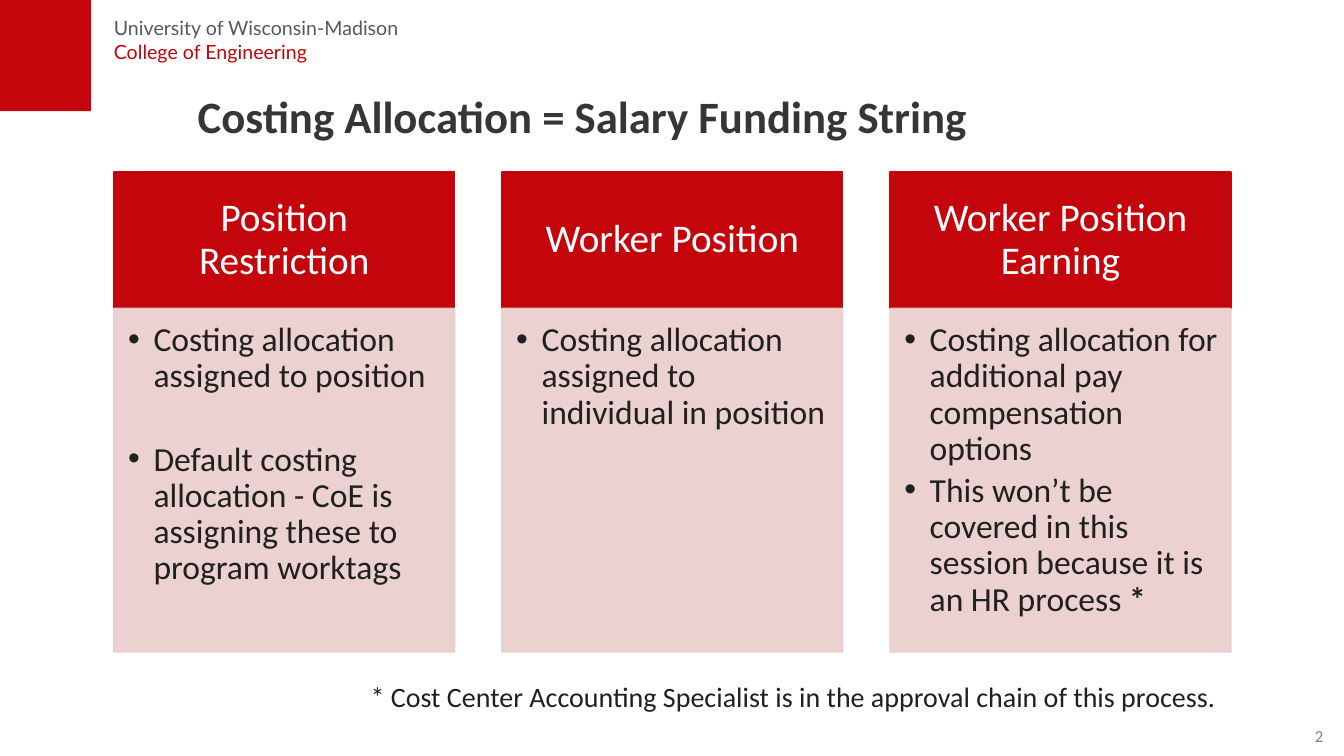
from lxml import etree
from pptx import Presentation
from pptx.dml.color import RGBColor
from pptx.enum.shapes import MSO_SHAPE
from pptx.enum.text import MSO_ANCHOR, PP_ALIGN
from pptx.oxml.ns import qn
from pptx.util import Cm, Pt

RECT = MSO_SHAPE.RECTANGLE
TOP, MIDDLE = MSO_ANCHOR.TOP, MSO_ANCHOR.MIDDLE
LEFT, CENTER, RIGHT = PP_ALIGN.LEFT, PP_ALIGN.CENTER, PP_ALIGN.RIGHT

# Content: a paragraph is a list of (text, bold) runs
SCHOOL = "University of Wisconsin-Madison"
COLLEGE = "College of Engineering"
TITLE = "Costing Allocation = Salary Funding String"
CARDS = [
    ("Position Restriction", 33.5, [
        [("Costing allocation assigned to position", False)],
        [("Default costing allocation - CoE is assigning these to "
          "program worktags", False)],
    ]),
    ("Worker Position", 4, [
        [("Costing allocation assigned to individual in position", False)],
    ]),
    ("Worker Position Earning", 4, [
        [("Costing allocation for additional pay compensation options", False)],
        [("This won’t be covered in this session because it is an HR process ",
          False), ("*", True)],
    ]),
]
NOTE = "* Cost Center Accounting Specialist is in the approval chain of this process."
NUMBER = "2"

COLORS = {
    "red": "C5050C", "college": "C3030C", "pink": "EACCCC", "white": "FFFFFF",
    "school": "585858", "title": "363636", "ink": "202020", "number": "808080",
}

# Card grid, in cm
LEFT_X, PITCH, WIDTH = 2.87, 9.78, 8.59
HEAD_Y, HEAD_H, BODY_H = 4.34, 3.43, 8.66


def rgb(name):
    return RGBColor.from_string(COLORS[name])


def write(frame, runs, size, color, font="Calibri", align=LEFT, line=1.0,
          after=0, bullet=False, first=True):
    """Put one paragraph of (text, bold) runs into a text frame."""
    para = frame.paragraphs[0] if first else frame.add_paragraph()
    para.alignment, para.line_spacing = align, line
    para.space_before, para.space_after = Pt(0), Pt(after)
    if bullet:
        props = para._p.get_or_add_pPr()
        props.set("marL", str(Cm(0.64)))
        props.set("indent", str(-Cm(0.64)))
        etree.SubElement(props, qn("a:buFont")).set("typeface", "Arial")
        etree.SubElement(props, qn("a:buChar")).set("char", "•")
    for text, bold in runs:
        run = para.add_run()
        run.text = text
        run.font.name, run.font.size, run.font.bold = font, Pt(size), bold
        run.font.color.rgb = rgb(color)


def setup(frame, inset, anchor=TOP, wrap=True):
    frame.word_wrap, frame.vertical_anchor = wrap, anchor
    (frame.margin_left, frame.margin_top,
     frame.margin_right, frame.margin_bottom) = map(Cm, inset)
    return frame


def label(x, y, w, h, inset, anchor=TOP, wrap=True):
    box = slide.shapes.add_textbox(Cm(x), Cm(y), Cm(w), Cm(h))
    return setup(box.text_frame, inset, anchor, wrap)


def block(x, y, w, h, color, alpha=None, edge=True):
    box = slide.shapes.add_shape(RECT, Cm(x), Cm(y), Cm(w), Cm(h))
    box.shadow.inherit = False
    box.fill.solid()
    box.fill.fore_color.rgb = rgb(color)
    if edge:
        box.line.width = Pt(1)
        box.line.color.rgb = rgb(color)
    else:
        box.line.fill.background()
    if alpha:
        for tint in box._element.spPr.iter(qn("a:srgbClr")):
            etree.SubElement(tint, qn("a:alpha")).set("val", str(alpha * 1000))
    return box


deck = Presentation()
deck.slide_width, deck.slide_height = Cm(33.87), Cm(19.05)
slide = deck.slides.add_slide(deck.slide_layouts[6])

# Brand corner and header
block(0, 0, 2.3, 2.8, "red", edge=False)
frame = label(2.87, 0.28, 11.96, 1.45, (0, 0.13, 0.25, 0.13))
write(frame, [(SCHOOL, False)], 14, "school", font="Lato")
write(frame, [(COLLEGE, False)], 14, "college", font="Lato", first=False)

# Title
frame = label(4.98, 1.88, 23.93, 2.13, (0, 0.13, 0, 0), MIDDLE)
write(frame, [(TITLE, True)], 32, "title", line=0.9)

# Cards
for i, (head, gap, points) in enumerate(CARDS):
    x = LEFT_X + i * PITCH
    box = block(x, HEAD_Y, WIDTH, HEAD_H, "red")
    frame = setup(box.text_frame, (0.56, 0.3, 0.56, 0.3), MIDDLE)
    write(frame, [(head, False)], 28, "white", align=CENTER, line=0.9)
    box = block(x, HEAD_Y + HEAD_H, WIDTH, BODY_H, "pink", alpha=90)
    frame = setup(box.text_frame, (0.36, 0.36, 0.25, 0.53))
    for j, runs in enumerate(points):
        write(frame, runs, 24, "ink", line=0.9, after=gap, bullet=True,
              first=j == 0)

# Footnote and slide number
frame = label(9.09, 16.99, 22.25, 1.12, (0.25, 0.13, 0.25, 0.13))
write(frame, [(NOTE, False)], 20, "ink")
frame = label(31.57, 18.03, 2.29, 1.02, (0.25, 0.13, 0.51, 0.13), MIDDLE, False)
write(frame, [(NUMBER, False)], 12, "number", align=RIGHT)

deck.save("out.pptx")
